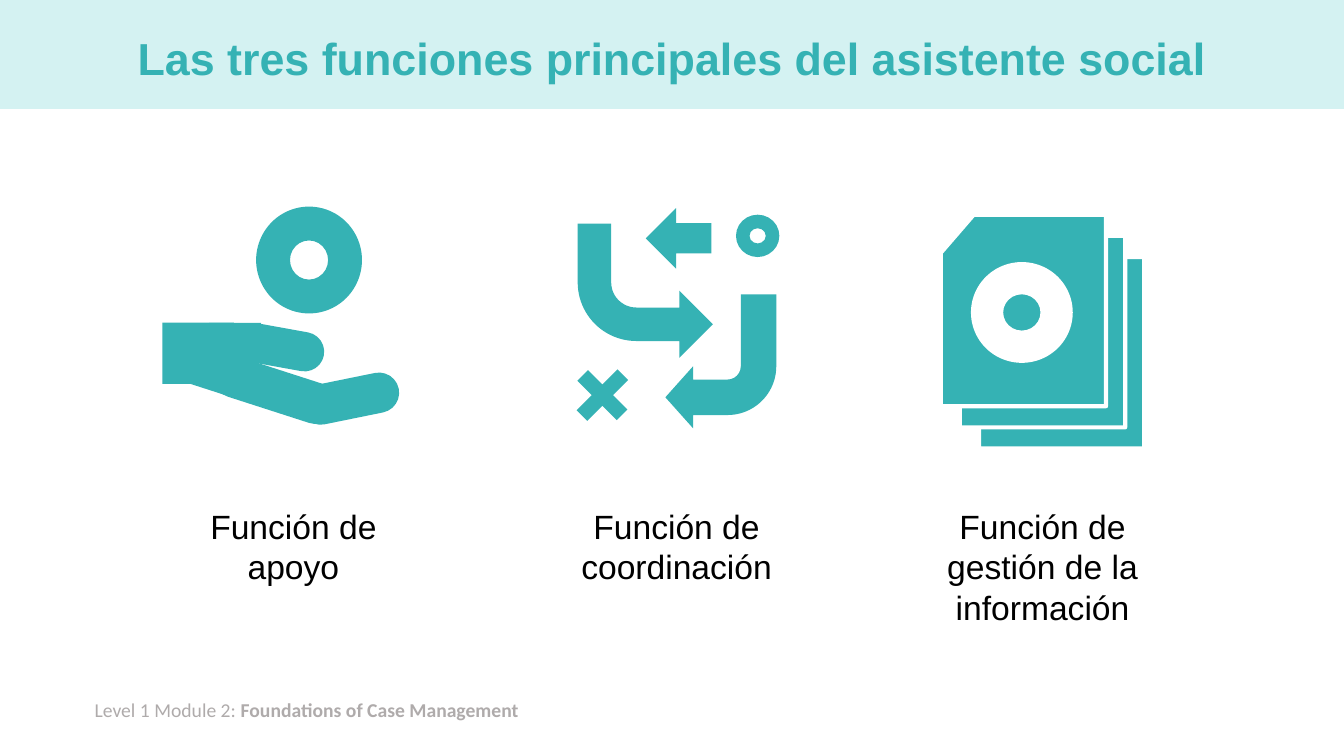
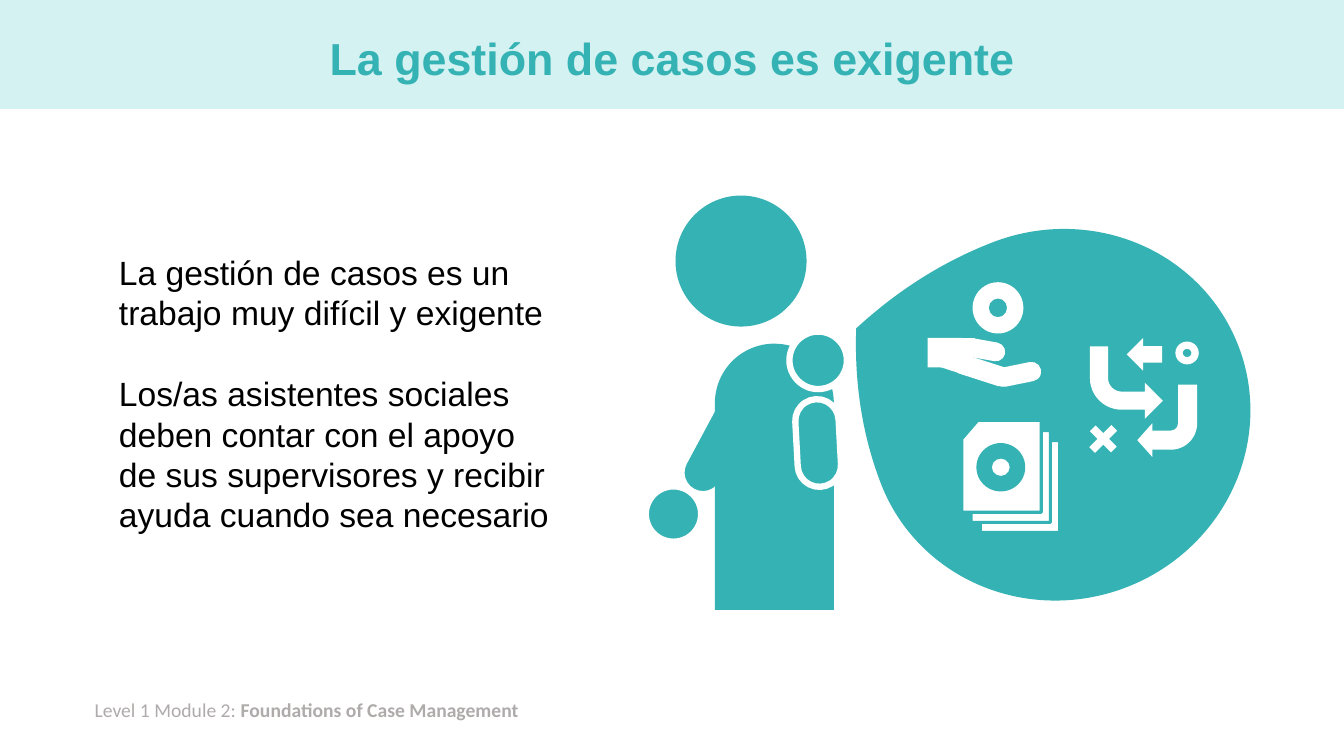
from dataclasses import dataclass

from pptx import Presentation
from pptx.dml.color import RGBColor
from pptx.enum.shapes import MSO_SHAPE
from pptx.enum.text import MSO_ANCHOR, MSO_AUTO_SIZE, PP_ALIGN
from pptx.oxml.ns import qn
from pptx.util import Inches, Pt


# Theme
@dataclass(frozen=True)
class Theme:
    teal: str = "35B2B4"
    band: str = "D4F2F2"
    white: str = "FFFFFF"
    black: str = "000000"
    grey: str = "AFABAB"
    font: str = "Arial"
    footer_font: str = "Calibri"
    title_size: int = 32
    text_size: int = 24
    footer_size: int = 14


@dataclass(frozen=True)
class Part:
    """One piece of a pictogram, placed in inches from its top left corner."""
    kind: MSO_SHAPE
    left: float
    top: float
    width: float
    height: float
    turn: float = 0
    flip: str = ""
    adjust: tuple = ()
    outline: float = 0
    inverse: bool = False


# Pictograms
HAND_WITH_COIN = [
    Part(MSO_SHAPE.ROUNDED_RECTANGLE, 0.91, 1.19, 0.41, 1.26, 107.9, "H", (0.5,)),
    Part(MSO_SHAPE.ROUNDED_RECTANGLE, 1.66, 1.41, 0.4, 0.99, 78.5, "H", (0.5,)),
    Part(MSO_SHAPE.ROUNDED_RECTANGLE, 0.97, 0.95, 0.39, 0.89, 100.2, "H", (0.5,)),
    Part(MSO_SHAPE.FLOWCHART_MANUAL_INPUT, 0.38, 1.06, 0.49, 0.79, 17.9),
    Part(MSO_SHAPE.RECTANGLE, 0.05, 1.1, 0.61, 0.71, 90),
    Part(MSO_SHAPE.DONUT, 0.93, 0, 1.05, 1.06, adjust=(0.32,)),
]
ROUTE_PLAN = [
    Part(MSO_SHAPE.DOWN_ARROW, 0.83, 0, 0.6, 0.65, 90),
    Part(MSO_SHAPE.BENT_ARROW, 0.13, 0.18, 1.34, 1.33, flip="V"),
    Part(MSO_SHAPE.BENT_ARROW, 1, 0.88, 1.1, 1.33, flip="HV",
         adjust=(0.32, 0.28, 0.25, 0.44)),
    Part(MSO_SHAPE.MATH_PLUS, 0, 1.49, 0.75, 0.78, 45, adjust=(0.2,)),
    Part(MSO_SHAPE.DONUT, 1.7, 0.09, 0.43, 0.42, adjust=(0.32,)),
]
PERSON = [
    Part(MSO_SHAPE.OVAL, 0.3, 0, 1.3, 1.3),
    Part(MSO_SHAPE.OVAL, 0.03, 2.91, 0.5, 0.5, outline=1),
    Part(MSO_SHAPE.ROUND_2_SAME_RECTANGLE, 0.51, 2.05, 0.38, 0.92, 208.2,
         adjust=(0.5, 0), outline=1),
    Part(MSO_SHAPE.ROUND_2_SAME_RECTANGLE, 0.69, 1.47, 1.18, 2.64, adjust=(0.5, 0)),
    Part(MSO_SHAPE.OVAL, 1.43, 1.35, 0.57, 0.57, outline=4.5),
    Part(MSO_SHAPE.ROUND_2_SAME_RECTANGLE, 1.5, 2.02, 0.43, 0.87, 356.9,
         adjust=(0.5, 0.5), outline=4.5),
]
SACK = [Part(MSO_SHAPE.TEAR, 0, 0, 3.8, 3.67, 339, "H", (0.83,))]


def record_cards(outline):
    cards = [Part(MSO_SHAPE.FLOWCHART_CARD, 0.19 * step, 0.21 * step, 1.64, 1.9,
                  outline=outline) for step in (2, 1, 0)]
    return cards + [Part(MSO_SHAPE.DONUT, 0.3, 0.47, 1.01, 1, adjust=(0.32,),
                         inverse=True)]


# Text
def add_text(paragraph, text, *, font, size, color, bold=False, align=None):
    if align is not None:
        paragraph.alignment = align
    run = paragraph.add_run()
    run.text = text
    run.font.name = font
    run.font.size = Pt(size)
    run.font.bold = bold
    run.font.color.rgb = RGBColor.from_string(color)


def place(shape, left, top, width, height):
    shape.left, shape.top = Inches(left), Inches(top)
    shape.width, shape.height = Inches(width), Inches(height)


class Deck:
    def __init__(self, theme):
        self.theme = theme
        self.prs = Presentation()
        self.prs.slide_width, self.prs.slide_height = Inches(13.33), Inches(7.5)
        self.slide = None

    def new_slide(self, layout, title):
        self.slide = self.prs.slides.add_slide(self.prs.slide_layouts.get_by_name(layout))
        if len(self.prs.slides) == 1:
            self.furnish_master()
        heading = self.slide.shapes.title
        place(heading, 0.92, 0.13, 11.5, 0.95)
        frame = heading.text_frame
        frame.auto_size = MSO_AUTO_SIZE.NONE
        frame.vertical_anchor = MSO_ANCHOR.MIDDLE
        frame.paragraphs[0].line_spacing = 0.9
        add_text(frame.paragraphs[0], title, font=self.theme.font,
                 size=self.theme.title_size, color=self.theme.teal, bold=True,
                 align=PP_ALIGN.CENTER)

    def furnish_master(self):
        """Draw the band and the footer once and move them to the master."""
        band = self.draw(self.slide.shapes,
                         Part(MSO_SHAPE.RECTANGLE, 0, 0, 13.33, 1.08), self.theme.band)
        footer = self.text_box(0.84, 6.87, 4.55, 0.34)
        for text, bold in (("Level 1 Module 2: ", False),
                           ("Foundations of Case Management", True)):
            add_text(footer.text_frame.paragraphs[0], text, font=self.theme.footer_font,
                     size=self.theme.footer_size, color=self.theme.grey, bold=bold)
        tree = self.prs.slide_master.element.cSld.spTree
        for offset, shape in enumerate((band, footer)):
            shape.element.nvSpPr.cNvPr.set("id", str(100 + offset))
            tree.insert(2 + offset, shape.element)

    def text_box(self, left, top, width, height):
        box = self.slide.shapes.add_textbox(*map(Inches, (left, top, width, height)))
        box.text_frame.word_wrap = True
        return box

    def caption(self, text, left, height):
        box = self.text_box(left, 4.97, 2.54, height)
        add_text(box.text_frame.paragraphs[0], text, font=self.theme.font,
                 size=self.theme.text_size, color=self.theme.black,
                 align=PP_ALIGN.CENTER)

    def body(self, statements, left, top, width, height):
        placeholder = self.slide.placeholders[1]
        place(placeholder, left, top, width, height)
        frame = placeholder.text_frame
        frame.auto_size = MSO_AUTO_SIZE.NONE
        for index, statement in enumerate(statements):
            paragraph = frame.add_paragraph() if index else frame.paragraphs[0]
            paragraph.space_before = Pt(29 if index else 0)
            properties = paragraph._p.get_or_add_pPr()
            properties.set("marL", "0")
            properties.set("indent", "0")
            properties.append(properties.makeelement(qn("a:buNone"), {}))
            add_text(paragraph, statement, font=self.theme.font,
                     size=self.theme.text_size, color=self.theme.black)

    def draw(self, shapes, part, fill, outline=None, left=0, top=0, scale=1):
        shape = shapes.add_shape(
            part.kind, Inches(left + part.left * scale), Inches(top + part.top * scale),
            Inches(part.width * scale), Inches(part.height * scale))
        shape.shadow.inherit = False
        shape.rotation = part.turn
        for axis in part.flip:
            shape.element.spPr.xfrm.set(f"flip{axis}", "1")
        for index, value in enumerate(part.adjust):
            shape.adjustments[index] = value
        shape.fill.solid()
        shape.fill.fore_color.rgb = RGBColor.from_string(fill)
        if part.outline:
            shape.line.color.rgb = RGBColor.from_string(outline)
            shape.line.width = Pt(part.outline)
        else:
            shape.line.fill.background()
        return shape

    def pictogram(self, parts, left, top, scale=1, on_teal=False):
        ink, ground = self.theme.teal, self.theme.white
        if on_teal:
            ink, ground = ground, ink
        group = self.slide.shapes.add_group_shape()
        for part in parts:
            self.draw(group.shapes, part, ground if part.inverse else ink, ground,
                      left, top, scale)


def main():
    deck = Deck(Theme())

    # The three functions
    deck.new_slide("Title Only", "Las tres funciones principales del asistente social")
    for parts, left, top, caption, caption_left, caption_height in (
        (HAND_WITH_COIN, 1.61, 2.05, "Función de apoyo", 1.64, 0.91),
        (ROUTE_PLAN, 5.6, 2.04, "Función de coordinación", 5.44, 0.91),
        (record_cards(3), 9.33, 2.13, "Función de gestión de la información", 9.07, 1.31),
    ):
        deck.pictogram(parts, left, top)
        deck.caption(caption, caption_left, caption_height)

    # The demands of the work
    deck.new_slide("Title and Content", "La gestión de casos es exigente")
    deck.body([
        "La gestión de casos es un trabajo muy difícil y exigente",
        "Los/as asistentes sociales deben contar con el apoyo de sus supervisores "
        "y recibir ayuda cuando sea necesario",
    ], 1.08, 2.45, 4.53, 2.93)
    deck.pictogram(SACK, 8.61, 2.28)
    deck.pictogram(PERSON, 6.4, 1.94)
    for parts, left, top, scale in (
        (HAND_WITH_COIN, 9.2, 2.8, 0.48),
        (ROUTE_PLAN, 10.74, 3.34, 0.54),
        (record_cards(2.25), 9.54, 4.17, 0.48),
    ):
        deck.pictogram(parts, left, top, scale, on_teal=True)

    deck.prs.save("out.pptx")


if __name__ == "__main__":
    main()
